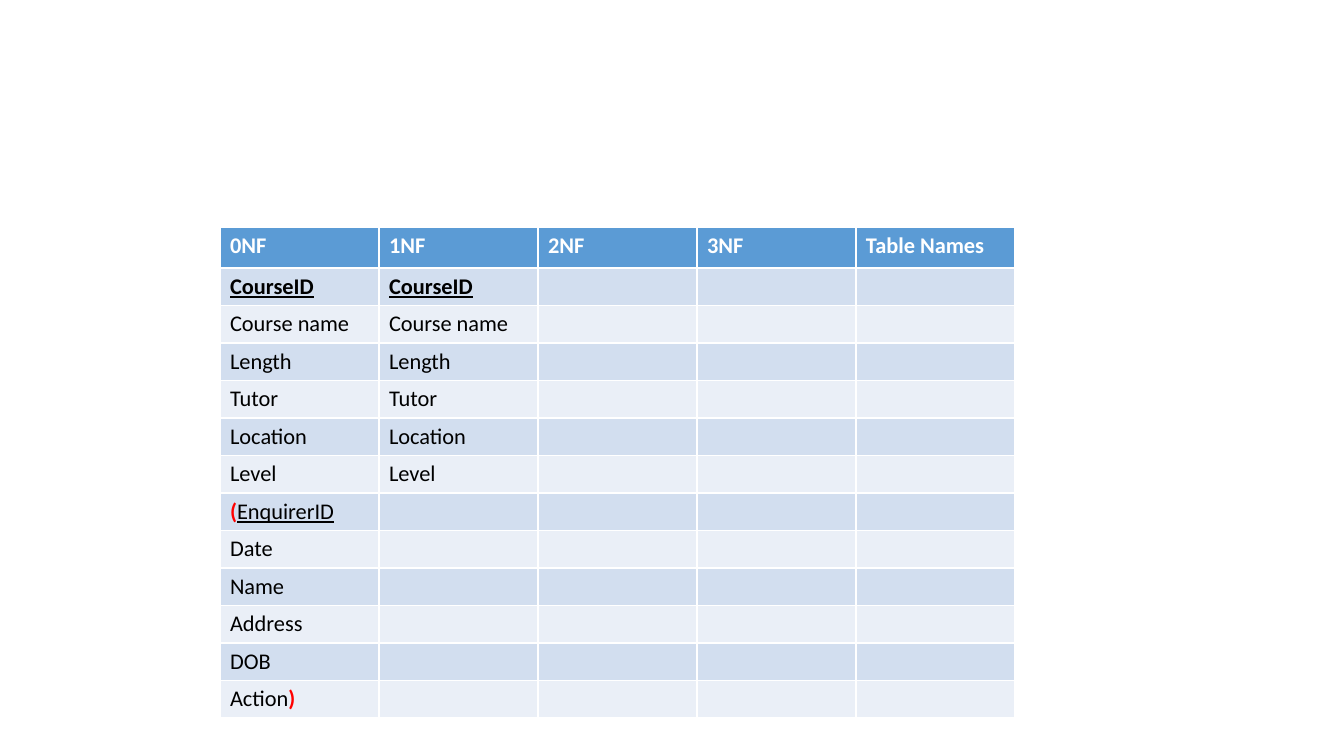
"""Builds the normalisation table slide."""
from lxml.etree import SubElement
from pptx import Presentation
from pptx.dml.color import RGBColor
from pptx.oxml.ns import qn
from pptx.util import Emu, Pt

WHITE = RGBColor(0xFF, 0xFF, 0xFF)
BLACK = RGBColor(0x00, 0x00, 0x00)
RED = RGBColor(0xFF, 0x00, 0x00)
HEADER_BLUE = RGBColor(0x5B, 0x9B, 0xD5)
BANDS = (RGBColor(0xD2, 0xDE, 0xEF), RGBColor(0xEA, 0xEF, 0xF7))

HEADINGS = ["0NF", "1NF", "2NF", "3NF", "Table Names"]
COURSE_FIELDS = ["CourseID", "Course name", "Length", "Tutor", "Location", "Level"]
ENQUIRER_FIELDS = ["(EnquirerID", "Date", "Name", "Address", "DOB", "Action)"]
ROWS = [[field, field, "", "", ""] for field in COURSE_FIELDS]
ROWS += [[field, "", "", "", ""] for field in ENQUIRER_FIELDS]
RUNS = {
    "(EnquirerID": ["(", "EnquirerID"],
    "Action)": ["Action", ")"],
}
KEYS = {"CourseID", "EnquirerID"}

FONT, SIZE = "Calibri", Pt(16)
TABLE_LEFT, TABLE_TOP = 220, 227
COLUMN_WIDTH, HEADER_HEIGHT, ROW_HEIGHT = 159, 41, 37


def px(length):
    return Emu(round(length * 914400 / 100.8))


def fill_cell(cell, text, background, heading=False):
    cell.fill.solid()
    cell.fill.fore_color.rgb = background
    paragraph = cell.text_frame.paragraphs[0]
    paragraph.font.name = FONT
    paragraph.font.size = SIZE
    if not text:
        SubElement(paragraph._p, qn("a:endParaRPr"), sz=str(SIZE.centipoints))
    for part in RUNS.get(text, [text] if text else []):
        run = paragraph.add_run()
        run.text = part
        bracket = part in "()"
        run.font.bold = heading or bracket or part == "CourseID"
        run.font.underline = part in KEYS
        run.font.color.rgb = WHITE if heading else RED if bracket else BLACK


def main():
    presentation = Presentation()
    presentation.slide_width = px(1344)
    presentation.slide_height = px(756)
    slide = presentation.slides.add_slide(presentation.slide_layouts[6])

    table = slide.shapes.add_table(
        len(ROWS) + 1, len(HEADINGS), px(TABLE_LEFT), px(TABLE_TOP),
        px(COLUMN_WIDTH * len(HEADINGS)), px(HEADER_HEIGHT + ROW_HEIGHT * len(ROWS)),
    ).table
    for column in table.columns:
        column.width = px(COLUMN_WIDTH)
    for index, texts in enumerate([HEADINGS] + ROWS):
        heading = index == 0
        table.rows[index].height = px(HEADER_HEIGHT if heading else ROW_HEIGHT)
        background = HEADER_BLUE if heading else BANDS[(index - 1) % 2]
        for cell, text in zip(table.rows[index].cells, texts):
            fill_cell(cell, text, background, heading)

    presentation.save("out.pptx")


if __name__ == "__main__":
    main()
